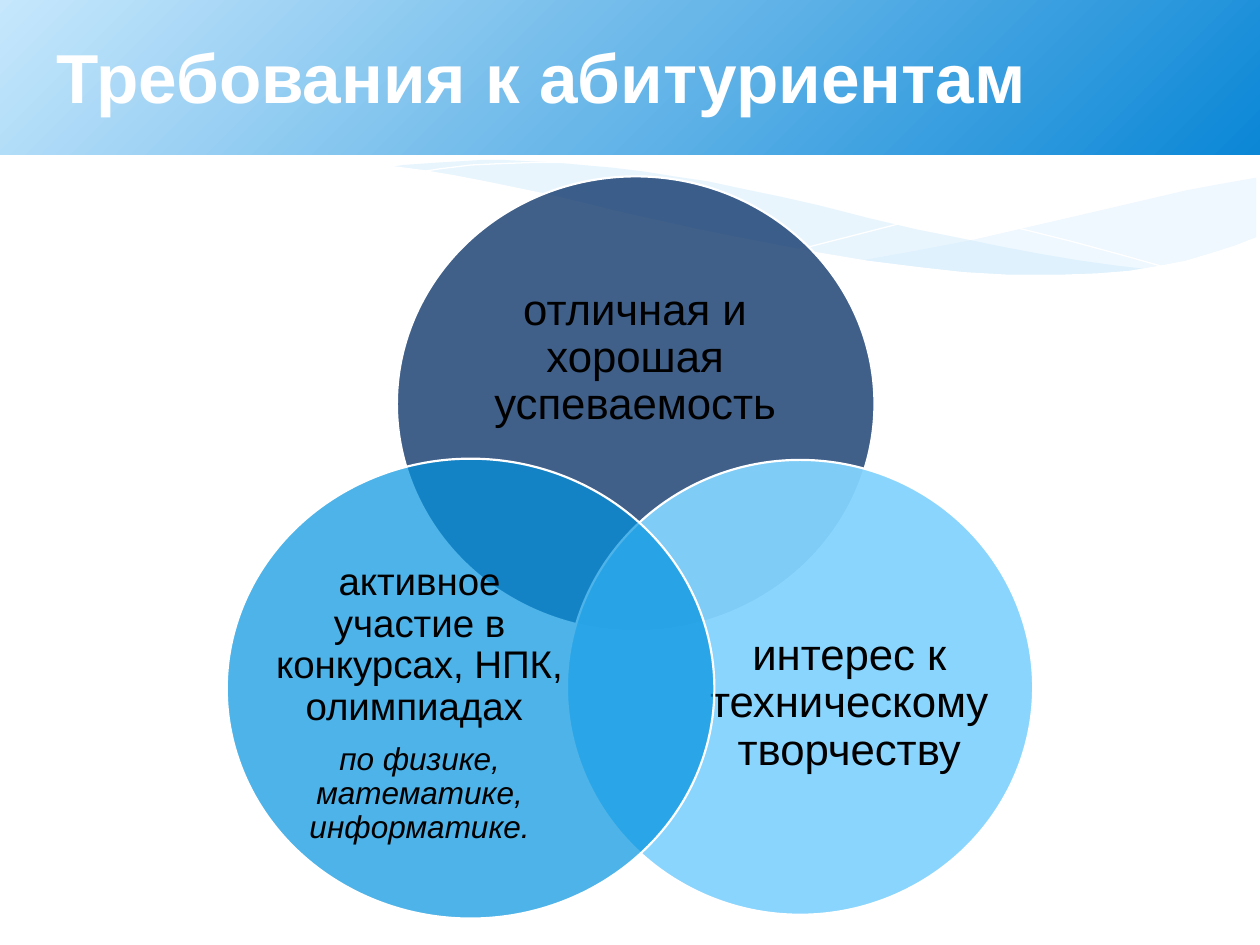
from lxml.etree import SubElement
from pptx import Presentation
from pptx.dml.color import RGBColor
from pptx.enum.shapes import MSO_SHAPE
from pptx.enum.text import MSO_ANCHOR, PP_ALIGN
from pptx.oxml import parse_xml
from pptx.oxml.ns import nsdecls, qn
from pptx.util import Inches, Pt

WHITE = "FFFFFF"
PALE_BLUE = "C6E7FC"
TITLE = "Требования к абитуриентам"

# Stops of the band gradient, from the bottom right corner outwards
BAND_STOPS = [(0, "0B87D6"), (50, "69B7E9"), (100, PALE_BLUE)]

# Background waves: outline points, fill colour, opacity in percent
WAVES = [
    ([(9.97, 1.41), (9.69, 1.46), (9.42, 1.51), (9.12, 1.58), (8.82, 1.65),
      (8.26, 1.78), (7.74, 1.9), (7.27, 1.99), (6.82, 2.07), (7.12, 2.11),
      (7.39, 2.14), (7.66, 2.17), (7.9, 2.18), (8.24, 2.19), (8.55, 2.19),
      (8.75, 2.18), (8.93, 2.16), (9.1, 2.14), (9.26, 2.11), (9.42, 2.07),
      (9.56, 2.03), (9.7, 1.99), (9.84, 1.94), (9.97, 1.89)], PALE_BLUE, 29),
    ([(9.14, 2.14), (8.87, 2.11), (8.58, 2.07), (8.28, 2.02), (7.96, 1.96),
      (7.62, 1.89), (7.27, 1.82), (6.89, 1.73), (6.5, 1.63), (6.19, 1.56),
      (5.9, 1.5), (5.62, 1.44), (5.35, 1.4), (5.1, 1.36), (4.85, 1.33),
      (4.62, 1.31), (4.41, 1.29), (4.2, 1.28), (4.01, 1.27), (3.82, 1.27),
      (3.49, 1.29), (3.2, 1.31), (3.07, 1.33), (3.44, 1.38), (3.83, 1.44),
      (4.25, 1.53), (4.7, 1.63), (5.12, 1.73), (5.51, 1.82), (5.87, 1.9),
      (6.22, 1.97), (6.55, 2.03), (6.86, 2.08), (7.16, 2.12), (7.43, 2.15),
      (7.69, 2.18), (7.94, 2.19), (8.17, 2.2), (8.59, 2.2), (8.78, 2.19),
      (8.97, 2.17)], PALE_BLUE, 40),
]
WAVE_LINES = [
    [(3.3, 1.37), (3.49, 1.34), (3.74, 1.31), (3.95, 1.3), (4.22, 1.29),
     (4.71, 1.29), (4.9, 1.3), (5.1, 1.32), (5.31, 1.34), (5.53, 1.36),
     (5.77, 1.38), (6.03, 1.42), (6.29, 1.45), (6.57, 1.5), (6.86, 1.55),
     (7.16, 1.61), (7.48, 1.68), (7.81, 1.75), (8.16, 1.83), (8.52, 1.92),
     (8.89, 2.02), (9.28, 2.13)],
    [(6.34, 1.98), (6.73, 1.88), (7.16, 1.77), (7.69, 1.65), (8.27, 1.52),
     (8.87, 1.4), (9.16, 1.35), (9.45, 1.32), (9.72, 1.29), (9.96, 1.27)],
]
WHITE_WAVE = [
    (9.98, 1.88), (9.8, 1.95), (9.61, 2.01), (9.41, 2.07), (9.2, 2.11),
    (8.96, 2.15), (8.71, 2.17), (8.44, 2.18), (7.99, 2.18), (7.65, 2.16),
    (7.29, 2.12), (6.89, 2.07), (6.47, 2), (6, 1.91), (5.5, 1.81),
    (4.96, 1.69), (4.39, 1.55), (3.86, 1.44), (3.6, 1.39), (3.36, 1.35),
    (3.13, 1.32), (2.92, 1.3), (2.71, 1.28), (2.32, 1.26), (1.97, 1.25),
    (1.67, 1.27), (1.4, 1.29), (1.16, 1.33), (0.96, 1.37), (0.73, 1.43),
    (0.57, 1.49), (0.44, 1.55), (0.44, 2.71), (9.98, 2.71)]

# Venn circles: place, colour, opacity, text place, paragraphs (text, size, italic)
CIRCLES = [
    ((3.15, 1.4, 3.79, 3.61), "052E65", 76, (3.65, 2.03, 2.78, 1.63),
     [("отличная и хорошая успеваемость", 25, False)]),
    ((4.5, 3.65, 3.7, 3.61), "83D3FE", 94, (5.63, 4.59, 2.22, 1.99),
     [("интерес к техническому творчеству", 25, False)]),
    ((1.8, 3.64, 3.87, 3.65), "0293E0", 70, (2.17, 4.58, 2.32, 2.01),
     [("активное участие в конкурсах, НПК, олимпиадах ", 22, False),
      ("по физике, математике, информатике.", 18, True)]),
]


def paint(fill, color, opacity=100):
    fill.solid()
    fill.fore_color.rgb = RGBColor.from_string(color)
    if opacity < 100:
        tint = fill._xPr.find(qn("a:solidFill"))[0]
        SubElement(tint, qn("a:alpha"), val=str(opacity * 1000))


def write(para, text, size, color, bold=False, italic=False, align=PP_ALIGN.LEFT):
    para.alignment = align
    span = para.add_run()
    span.text = text
    span.font.name = "Arial"
    span.font.size = Pt(size)
    span.font.bold = bold
    span.font.italic = italic
    paint(span.font.fill, color)


def add_outline(slide, points, closed):
    corners = [(Inches(x), Inches(y)) for x, y in points]
    builder = slide.shapes.build_freeform(*corners[0])
    builder.add_line_segments(corners[1:], close=closed)
    outline = builder.convert_to_shape()
    outline.shadow.inherit = False
    return outline


def add_wave(slide, points, color, opacity=100):
    wave = add_outline(slide, points, closed=True)
    paint(wave.fill, color, opacity)
    wave.line.fill.background()


def add_wave_line(slide, points):
    curve = add_outline(slide, points, closed=False)
    curve.fill.background()
    paint(curve.line.fill, WHITE)
    curve.line.width = Pt(0)


def add_band(slide):
    band = slide.shapes.add_shape(MSO_SHAPE.RECTANGLE, 0, 0, Inches(10), Inches(1.23))
    band.shadow.inherit = False
    band.line.fill.background()
    stops = "".join(
        f'<a:gs pos="{place * 1000}"><a:srgbClr val="{color}"/></a:gs>'
        for place, color in BAND_STOPS)
    gradient = parse_xml(
        f'<a:gradFill {nsdecls("a")} rotWithShape="1"><a:gsLst>{stops}</a:gsLst>'
        '<a:path path="circle"><a:fillToRect l="100000" t="100000"/></a:path>'
        '</a:gradFill>')
    band._element.spPr.find(qn("a:prstGeom")).addnext(gradient)


def add_circle(slide, place, color, opacity, text_place, paragraphs):
    circle = slide.shapes.add_shape(MSO_SHAPE.OVAL, *map(Inches, place))
    circle.shadow.inherit = False
    paint(circle.fill, color, opacity)
    paint(circle.line.fill, WHITE)
    circle.line.width = Pt(1.25)

    frame = slide.shapes.add_textbox(*map(Inches, text_place)).text_frame
    frame.word_wrap = True
    frame.vertical_anchor = MSO_ANCHOR.MIDDLE
    frame.margin_left = frame.margin_right = frame.margin_top = frame.margin_bottom = 0
    for index, (text, size, italic) in enumerate(paragraphs):
        para = frame.add_paragraph() if index else frame.paragraphs[0]
        para.line_spacing = 0.9
        para.space_after = Pt(round(size * 0.35))
        write(para, text, size, "000000", italic=italic, align=PP_ALIGN.CENTER)


def place_title(slide):
    title = slide.shapes.title
    title.left, title.top, title.width, title.height = map(
        Inches, (0.35, 0.13, 8.23, 0.94))
    title.text_frame.vertical_anchor = MSO_ANCHOR.MIDDLE
    write(title.text_frame.paragraphs[0], TITLE, 39.6, WHITE, bold=True)
    slide.shapes._spTree.append(title._element)  # in front of the band


def main():
    deck = Presentation()
    deck.slide_width, deck.slide_height = Inches(10), Inches(7.5)
    slide = deck.slides.add_slide(deck.slide_layouts[5])
    paint(slide.background.fill, WHITE)
    for wave in WAVES:
        add_wave(slide, *wave)
    for points in WAVE_LINES:
        add_wave_line(slide, points)
    add_wave(slide, WHITE_WAVE, WHITE)
    add_band(slide)
    for circle in CIRCLES:
        add_circle(slide, *circle)
    place_title(slide)
    deck.save("out.pptx")


if __name__ == "__main__":
    main()
